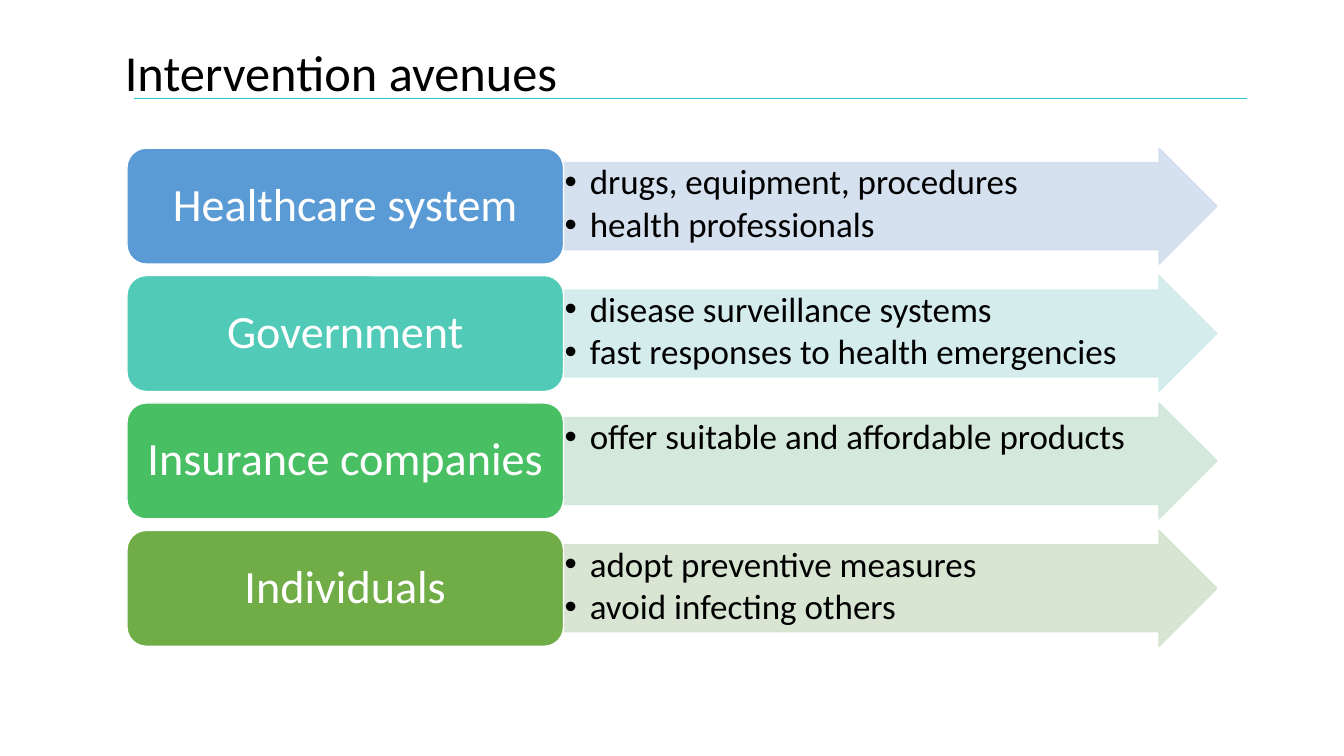
"""Build the "Intervention avenues" slide: four actors, each with an arrow of measures."""
import pptx
import pptx.util
import pptx.dml.color
import pptx.enum.shapes
import pptx.enum.text
import pptx.oxml.ns
import lxml.etree

Inches, Pt = pptx.util.Inches, pptx.util.Pt
RGBColor = pptx.dml.color.RGBColor
SHAPE = pptx.enum.shapes.MSO_SHAPE
ANCHOR = pptx.enum.text.MSO_ANCHOR
ALIGN = pptx.enum.text.PP_ALIGN
qn = pptx.oxml.ns.qn

BLACK = RGBColor(0x00, 0x00, 0x00)
WHITE = RGBColor(0xFF, 0xFF, 0xFF)
RULE_TEAL = RGBColor(0x2E, 0xC7, 0xD6)
BLUE, PALE_BLUE = RGBColor(0x5B, 0x9B, 0xD5), RGBColor(0xD2, 0xDE, 0xEF)
TEAL, PALE_TEAL = RGBColor(0x52, 0xCA, 0xB8), RGBColor(0xD0, 0xEC, 0xEA)
GREEN, PALE_GREEN = RGBColor(0x49, 0xBF, 0x64), RGBColor(0xD0, 0xE7, 0xD8)
OLIVE, PALE_OLIVE = RGBColor(0x70, 0xAD, 0x47), RGBColor(0xD5, 0xE3, 0xCF)

AVENUES = [
    ("Healthcare system", BLUE, PALE_BLUE,
     ["drugs, equipment, procedures", "health professionals"]),
    ("Government", TEAL, PALE_TEAL,
     ["disease surveillance systems", "fast responses to health emergencies"]),
    ("Insurance companies", GREEN, PALE_GREEN,
     ["offer suitable and affordable products"]),
    ("Individuals", OLIVE, PALE_OLIVE,
     ["adopt preventive measures", "avoid infecting others"]),
]
FIRST_TOP, ROW_STEP, ROW_HEIGHT = 1.47, 1.264, 1.15


def write(holder, lines, size, color, align=ALIGN.LEFT, anchor=ANCHOR.MIDDLE,
          inset=(0.1, 0.05), bulleted=False):
    frame = holder.text_frame
    frame.word_wrap = True
    frame.vertical_anchor = anchor
    frame.margin_left = frame.margin_right = Inches(inset[0])
    frame.margin_top = frame.margin_bottom = Inches(inset[1])
    frame.text = "\n".join(lines)
    for paragraph in frame.paragraphs:
        paragraph.alignment = align
        paragraph.line_spacing = 0.9
        if bulleted:
            paragraph.space_after = Pt(3.5)
            properties = paragraph._p.get_or_add_pPr()
            properties.set("marL", str(Inches(0.25)))
            properties.set("indent", str(Inches(-0.25)))
            lxml.etree.SubElement(properties, qn("a:buFont")).set("typeface", "Arial")
            lxml.etree.SubElement(properties, qn("a:buChar")).set("char", "•")
        paragraph.font.name = "Calibri"
        paragraph.font.size = Pt(size)
        paragraph.font.color.rgb = color


def add_block(kind, left, top, width, fill, line):
    block = slide.shapes.add_shape(
        kind, Inches(left), Inches(top), Inches(width), Inches(ROW_HEIGHT))
    block.shadow.inherit = False
    block.fill.solid()
    block.fill.fore_color.rgb = fill
    block.line.color.rgb = line
    block.line.width = Pt(1)
    return block


deck = pptx.Presentation()
deck.slide_width, deck.slide_height = Inches(13.33), Inches(7.5)
slide = deck.slides.add_slide(deck.slide_layouts[6])

title_rule = slide.shapes.add_connector(
    pptx.enum.shapes.MSO_CONNECTOR.STRAIGHT,
    Inches(1.33), Inches(0.98), Inches(12.37), Inches(0.98))
title_rule.line.color.rgb = RULE_TEAL
title_rule.line.width = Pt(0.5)
lxml.etree.SubElement(title_rule._element.spPr, qn("a:effectLst"))

title = slide.shapes.add_textbox(Inches(1.14), Inches(0.02), Inches(11.5), Inches(1.45))
write(title, ["Intervention avenues"], 36, BLACK)

for row, (actor, strong, pale, measures) in enumerate(AVENUES):
    top = FIRST_TOP + row * ROW_STEP

    arrow = add_block(SHAPE.RIGHT_ARROW, 5.58, top, 6.49, pale, pale)
    arrow.adjustments[0], arrow.adjustments[1] = 0.75, 0.5
    for tint in arrow._element.spPr.iter(qn("a:srgbClr")):
        lxml.etree.SubElement(tint, qn("a:alpha")).set("val", "90000")
    write(arrow, measures, 25, BLACK, anchor=ANCHOR.TOP, inset=(0.02, 0.02), bulleted=True)

    actor_box = add_block(SHAPE.ROUNDED_RECTANGLE, 1.26, top, 4.33, strong, WHITE)
    write(actor_box, [actor], 33, WHITE, align=ALIGN.CENTER, inset=(0.14, 0.07))

deck.save("out.pptx")
